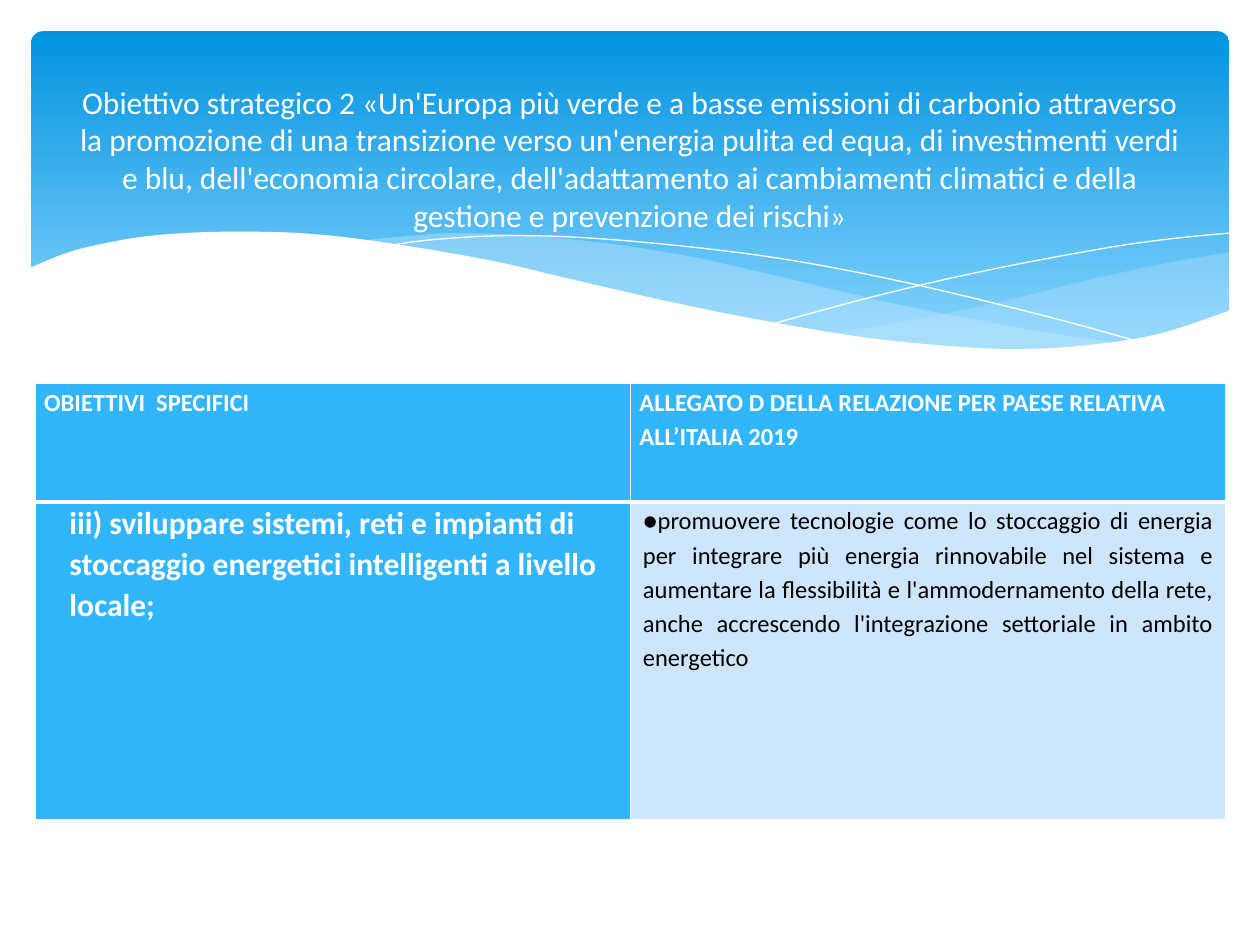
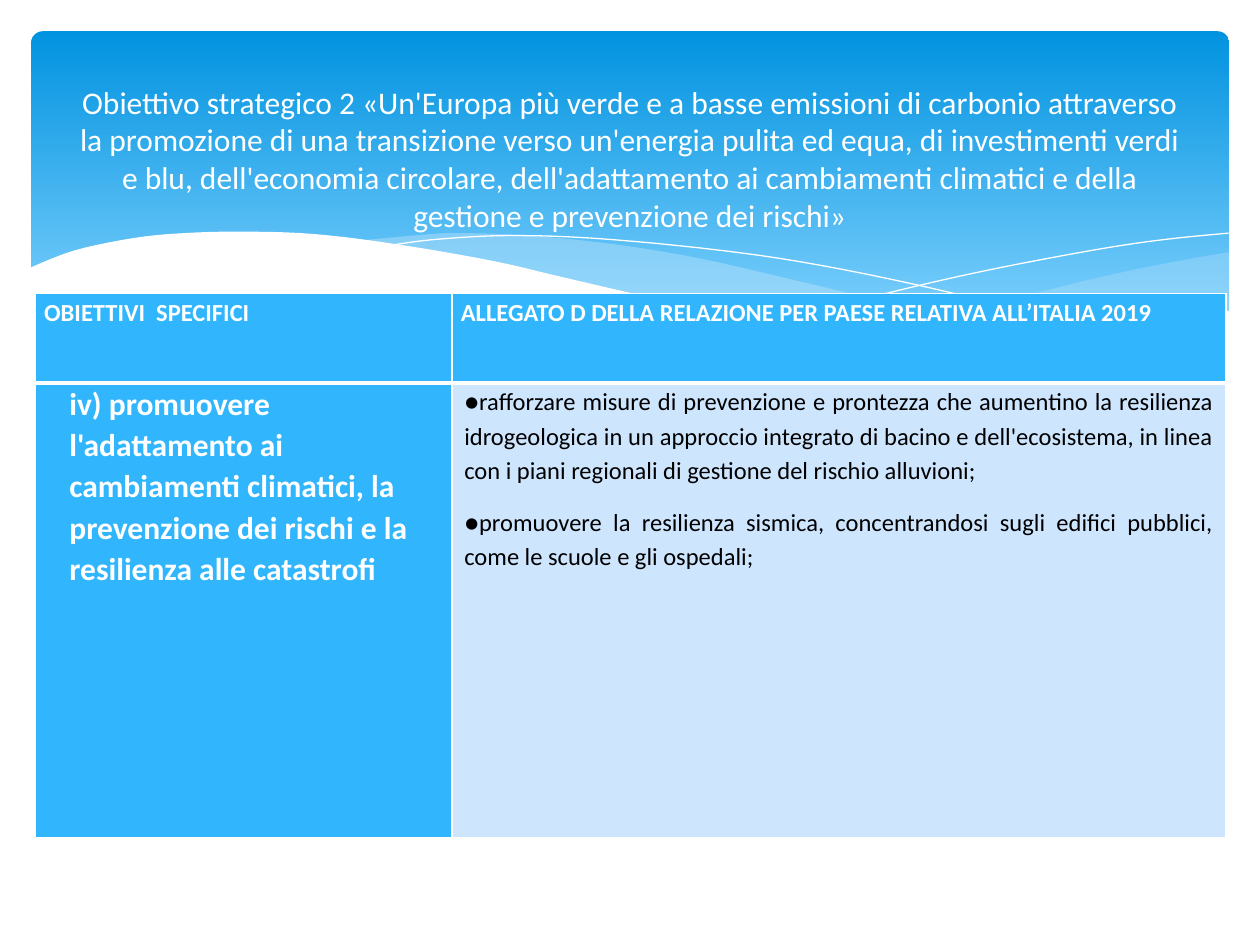
import pptx
import pptx.util
import pptx.dml.color
import pptx.enum.shapes
import pptx.enum.text
import pptx.oxml
import pptx.oxml.ns
from pptx.util import Cm

TITLE = (
    "Obiettivo strategico 2 «Un'Europa più verde e a basse emissioni di carbonio "
    "attraverso la promozione di una transizione verso un'energia pulita ed equa, "
    "di investimenti verdi e blu, dell'economia circolare, dell'adattamento ai "
    "cambiamenti climatici e della gestione e prevenzione dei rischi»"
)
HEADINGS = (
    "OBIETTIVI  SPECIFICI",
    "ALLEGATO D DELLA RELAZIONE PER PAESE RELATIVA ALL’ITALIA 2019",
)
OBJECTIVES = [
    dict(
        goal="iii) sviluppare sistemi, reti e impianti di stoccaggio energetici "
             "intelligenti a livello locale;",
        actions=[
            "●promuovere tecnologie come lo stoccaggio di energia per integrare più "
            "energia rinnovabile nel sistema e aumentare la flessibilità e "
            "l'ammodernamento della rete, anche accrescendo l'integrazione settoriale "
            "in ambito energetico",
        ],
        top=7.73, widths=(12, 12), heights=(2.39, 6.41),
    ),
    dict(
        goal="iv) promuovere l'adattamento ai cambiamenti climatici, la prevenzione "
             "dei rischi e la resilienza alle catastrofi",
        actions=[
            "●rafforzare misure di prevenzione e prontezza che aumentino la resilienza "
            "idrogeologica in un approccio integrato di bacino e dell'ecosistema, in "
            "linea con i piani regionali di gestione del rischio alluvioni;",
            "●promuovere la resilienza sismica, concentrandosi sugli edifici pubblici, "
            "come le scuole e gli ospedali;",
        ],
        top=5.92, widths=(8.4, 15.6), heights=(1.8, 9.17),
    ),
]

RIGHT_SWELL_TOP = [(16.79, 6.73), (18.52, 6.43), (20.45, 6.02), (21.87, 5.66),
                   (23.39, 5.33), (24.79, 5.08)]
RIGHT_SWELL_BASE = [(24.79, 6.27), (23.75, 6.65), (22.58, 6.91), (20.4, 7.06),
                    (18.59, 6.96), (16.79, 6.73)]
LEFT_SWELL_TOP = [(7.26, 4.85), (8.33, 4.75), (9.17, 4.7), (10.67, 4.75),
                  (12.42, 4.93), (14.1, 5.21), (15.98, 5.64), (17.93, 6.1),
                  (19.69, 6.45), (21.26, 6.73), (22.68, 6.93)]
LEFT_SWELL_BASE = [(22.68, 6.93), (21.29, 7.06), (19.63, 7.04), (18.01, 6.91),
                   (16.1, 6.63), (14.38, 6.3), (11.4, 5.64), (9.73, 5.26),
                   (8.2, 4.98), (7.26, 4.85)]
FALLING_LINE = [(7.85, 4.95), (8.74, 4.83), (10.19, 4.75), (11.91, 4.8),
                (14.12, 5), (16.15, 5.28), (18.47, 5.74), (21.11, 6.38),
                (23.04, 6.91)]
RISING_LINE = [(15.57, 6.53), (17.65, 5.97), (19.71, 5.49), (22, 5.05),
               (23.47, 4.83), (24.77, 4.7)]
WHITE_WAVE = [(0.58, 5.41), (1.5, 5.05), (2.69, 4.8), (3.71, 4.7), (4.9, 4.67),
              (6.35, 4.72), (8.03, 4.93), (9.93, 5.26), (11.35, 5.59),
              (13.44, 6.07), (15.32, 6.45), (17.48, 6.81), (19.33, 6.99),
              (20.55, 7.04), (21.92, 6.96), (23.37, 6.73), (24.82, 6.25)]
WAVE_FLOOR = [(24.82, 8.36), (0.58, 8.36)]


def rgb(code):
    return pptx.dml.color.RGBColor.from_string(code)


def smooth(knots, steps=5):
    ends = [knots[0], *knots, knots[-1]]
    curve = []
    for a, b, c, d in zip(ends, ends[1:], ends[2:], ends[3:]):
        for t in (step / steps for step in range(steps)):
            curve.append(tuple(
                (2 * q + (r - p) * t + (2 * p - 5 * q + 4 * r - s) * t ** 2
                 + (3 * q - p - 3 * r + s) * t ** 3) / 2
                for p, q, r, s in zip(a, b, c, d)))
    return curve + [knots[-1]]


class Deck:
    FONT = "Calibri"
    WHITE, BLACK = "FFFFFF", "000000"
    BAND_TOP, BAND_BASE, SWELL = "0293E0", "83D3FE", "C6E7FC"
    ACCENT, PALE = "31B6FD", "CEE5FE"
    ALIGN = pptx.enum.text.PP_ALIGN

    def __init__(self):
        self.prs = pptx.Presentation()
        self.prs.slide_width, self.prs.slide_height = Cm(25.4), Cm(19.05)
        self.slide = None

    def new_slide(self):
        self.slide = self.prs.slides.add_slide(self.prs.slide_layouts[6])
        self.band()
        self.area(smooth(RIGHT_SWELL_TOP) + smooth(RIGHT_SWELL_BASE), self.SWELL, 29)
        self.area(smooth(LEFT_SWELL_TOP) + smooth(LEFT_SWELL_BASE), self.SWELL, 40)
        self.curve(FALLING_LINE)
        self.curve(RISING_LINE)
        self.area(smooth(WHITE_WAVE) + WAVE_FLOOR, self.WHITE)

    def band(self):
        band = self.slide.shapes.add_shape(
            pptx.enum.shapes.MSO_SHAPE.ROUNDED_RECTANGLE,
            Cm(0.63), Cm(0.63), Cm(24.15), Cm(6.86))
        band.adjustments[0] = 0.034
        band.shadow.inherit = False
        band.line.fill.background()
        band.fill.gradient()
        band.fill.gradient_angle = 270
        stops = zip(band.fill.gradient_stops, (0, 0.9), (self.BAND_TOP, self.BAND_BASE))
        for stop, position, color in stops:
            stop.position = position
            stop.color.rgb = rgb(color)

    def outline(self, points, close):
        emu = [(Cm(x), Cm(y)) for x, y in points]
        builder = self.slide.shapes.build_freeform(*emu[0])
        builder.add_line_segments(emu[1:], close=close)
        shape = builder.convert_to_shape()
        shape.shadow.inherit = False
        return shape

    def area(self, points, color, opacity=100):
        area = self.outline(points, close=True)
        area.line.fill.background()
        area.fill.solid()
        area.fill.fore_color.rgb = rgb(color)
        if opacity < 100:
            tone = area._element.spPr.find(".//" + pptx.oxml.ns.qn("a:srgbClr"))
            tone.append(pptx.oxml.parse_xml(
                f'<a:alpha {pptx.oxml.ns.nsdecls("a")} val="{opacity * 1000}"/>'))

    def curve(self, knots):
        curve = self.outline(smooth(knots), close=False)
        curve.fill.background()
        curve.line.color.rgb = rgb(self.WHITE)
        curve.line.width = 0

    def set_text(self, frame, lines, size, color, bold=False, align=ALIGN.LEFT,
                 spacing=1.0, after=0):
        frame.text = "\n".join(lines)
        for paragraph in frame.paragraphs:
            paragraph.alignment = align
            paragraph.line_spacing = spacing
            paragraph.space_after = pptx.util.Pt(after)
            for run in paragraph.runs:
                run.font.name = self.FONT
                run.font.size = pptx.util.Pt(size)
                run.font.bold = bold
                run.font.color.rgb = rgb(color)

    def title(self, text):
        frame = self.slide.shapes.add_textbox(
            Cm(1.27), Cm(0.94), Cm(22.86), Cm(3.48)).text_frame
        frame.word_wrap = True
        frame.margin_top, frame.margin_bottom = Cm(1.02), 0
        frame.vertical_anchor = pptx.enum.text.MSO_ANCHOR.MIDDLE
        self.set_text(frame, [text], 18, self.WHITE, align=self.ALIGN.CENTER)

    def cell(self, cell, lines, fill, top, bottom, left=0.18, right=0.18, **style):
        cell.margin_left, cell.margin_right = Cm(left), Cm(right)
        cell.margin_top = cell.margin_bottom = 0
        self.set_text(cell.text_frame, lines, **style)
        cell.fill.solid()
        cell.fill.fore_color.rgb = rgb(fill)
        borders = zip("LRTB", (1, 1, top, bottom))
        for place, (side, points) in enumerate(borders):
            cell._tc.get_or_add_tcPr().insert(place, pptx.oxml.parse_xml(
                f'<a:ln{side} {pptx.oxml.ns.nsdecls("a")} w="{pptx.util.Pt(points)}">'
                f'<a:solidFill><a:srgbClr val="{self.WHITE}"/></a:solidFill></a:ln{side}>'))

    def objective_table(self, goal, actions, top, widths, heights):
        table = self.slide.shapes.add_table(
            2, 2, Cm(0.71), Cm(top), Cm(sum(widths)), Cm(sum(heights))).table
        for column, width in zip(table.columns, widths):
            column.width = Cm(width)
        for row, height in zip(table.rows, heights):
            row.height = Cm(height)
        for index, heading in enumerate(HEADINGS):
            self.cell(table.cell(0, index), [heading], self.ACCENT, top=1, bottom=3,
                      size=14, color=self.WHITE, bold=True, spacing=1.15)
        self.cell(table.cell(1, 0), [goal], self.ACCENT, top=3, bottom=1, left=0.69,
                  size=18, color=self.WHITE, bold=True, spacing=1.07, after=8)
        self.cell(table.cell(1, 1), actions, self.PALE, top=3, bottom=1, left=0.25,
                  right=0.25, size=14, color=self.BLACK, align=self.ALIGN.JUSTIFY,
                  spacing=1.15, after=10)


def main():
    deck = Deck()
    for objective in OBJECTIVES:
        deck.new_slide()
        deck.title(TITLE)
        deck.objective_table(**objective)
    deck.prs.save("out.pptx")


if __name__ == "__main__":
    main()
